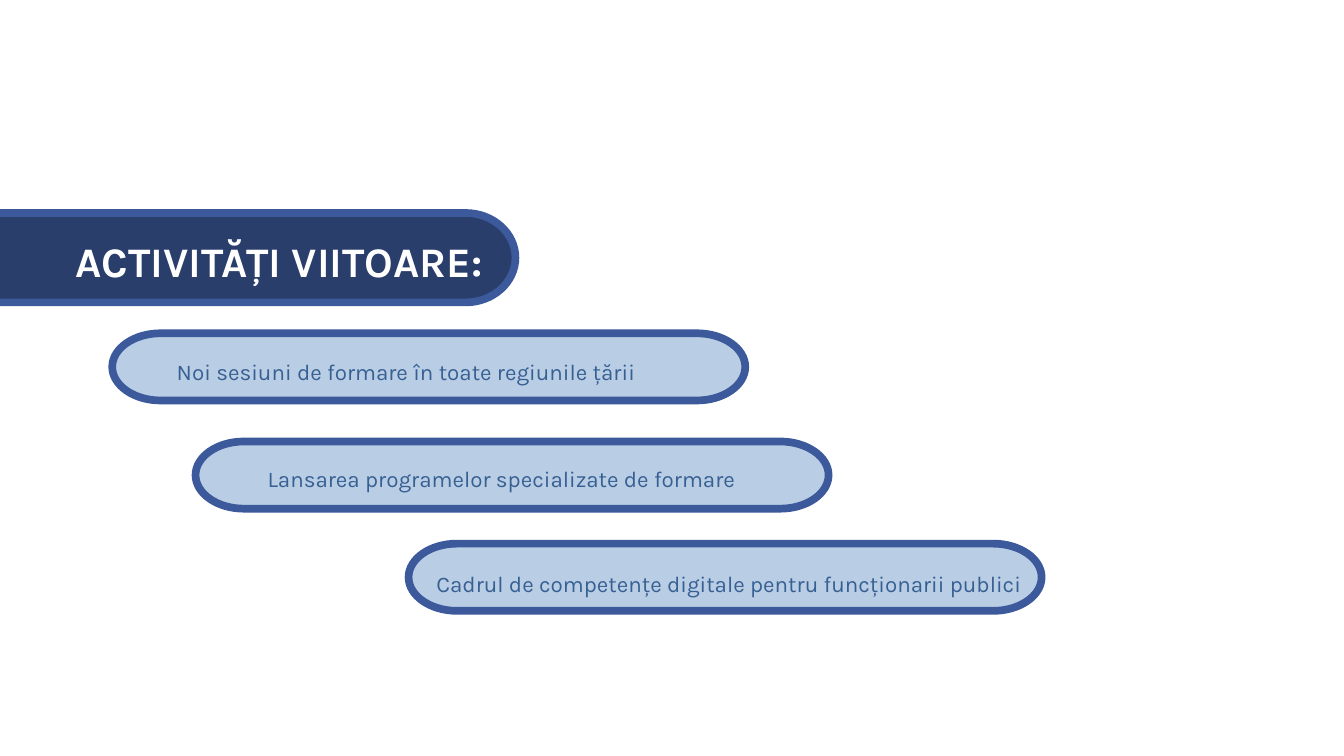
from lxml import etree
from pptx import Presentation
from pptx.dml.color import RGBColor
from pptx.enum.text import MSO_ANCHOR, MSO_AUTO_SIZE, PP_ALIGN
from pptx.oxml.ns import qn
from pptx.util import Inches, Pt

NAVY = RGBColor(0x29, 0x3E, 0x6B)
BLUE = RGBColor(0x3B, 0x59, 0x9B)
PALE_BLUE = RGBColor(0xB9, 0xCD, 0xE5)
TEXT_BLUE = RGBColor(0x37, 0x60, 0x92)
WHITE = RGBColor(0xFF, 0xFF, 0xFF)
FONT = "Karla"
CURVE = 0.55  # Bezier handle length of a quarter ellipse, per radius

# Left and top of each activity pill
PILL_SIZE = (9.42, 1)
PILL_CORNERS = [(1.67, 4.96), (2.91, 6.57), (6.08, 8.09)]

# Text and box of each activity label
LABELS = [
    ("Noi sesiuni de formare în toate regiunile țării ",
     (2.04, 4.92, 8.08, 0.74)),
    ("Lansarea programelor specializate de formare",
     (3.42, 6.51, 8.08, 0.74)),
    ("Cadrul de competențe digitale pentru funcționarii publici",
     (6.44, 8.08, 8.81, 0.74)),
]


def add_segment(outline, kind, points):
    segment = etree.SubElement(outline, qn(f"a:{kind}"))
    for x, y in points:
        etree.SubElement(segment, qn("a:pt"),
                         x=str(Inches(x)), y=str(Inches(y)))


def round_ends(shape, width, height, radius):
    """Turn a rectangular outline into a bar with half-ellipse ends."""
    outline = next(shape.element.iter(qn("a:path")))
    for segment in list(outline):
        outline.remove(segment)
    middle = height / 2
    inset = radius * (1 - CURVE)
    rise = middle * (1 - CURVE)
    right_end = width - radius
    add_segment(outline, "moveTo", [(right_end, 0)])
    add_segment(outline, "cubicBezTo",
                [(width - inset, 0), (width, rise), (width, middle)])
    add_segment(outline, "cubicBezTo",
                [(width, height - rise), (width - inset, height),
                 (right_end, height)])
    add_segment(outline, "lnTo", [(radius, height)])
    add_segment(outline, "cubicBezTo",
                [(inset, height), (0, height - rise), (0, middle)])
    add_segment(outline, "cubicBezTo",
                [(0, rise), (inset, 0), (radius, 0)])
    add_segment(outline, "close", [])


def add_pill(slide, box, end_radius, fill):
    left, top, width, height = box
    right, bottom = left + width, top + height
    builder = slide.shapes.build_freeform(Inches(left), Inches(top))
    builder.add_line_segments([
        (Inches(x), Inches(y))
        for x, y in ((right, top), (right, bottom), (left, bottom))])
    shape = builder.convert_to_shape()
    round_ends(shape, width, height, end_radius)
    shape.shadow.inherit = False
    shape.fill.solid()
    shape.fill.fore_color.rgb = fill
    shape.line.color.rgb = BLUE
    shape.line.width = Pt(8.25)


def add_label(slide, box, text, size, color, bold=False,
              align=PP_ALIGN.LEFT, anchor=MSO_ANCHOR.TOP):
    text_box = slide.shapes.add_textbox(*[Inches(value) for value in box])
    frame = text_box.text_frame
    frame.word_wrap = True
    frame.auto_size = MSO_AUTO_SIZE.SHAPE_TO_FIT_TEXT
    frame.vertical_anchor = anchor
    frame.margin_left = frame.margin_right = Inches(0)
    frame.margin_top = frame.margin_bottom = Inches(0)
    paragraph = frame.paragraphs[0]
    paragraph.alignment = align
    paragraph.line_spacing = Pt(63)
    run = paragraph.add_run()
    run.text = text
    run.font.name = FONT
    run.font.size = Pt(size)
    run.font.bold = bold
    run.font.color.rgb = color


def add_title_banner(slide, box):
    left, top, width, height = box
    add_pill(slide, box, 0.74, NAVY)
    add_label(slide, (left + 2.97, top + 0.21, 6.79, 0.81),
              "ACTIVITĂȚI VIITOARE:", 45, WHITE, bold=True)


def add_activities(slide):
    for corner in PILL_CORNERS:
        add_pill(slide, corner + PILL_SIZE, 0.72, PALE_BLUE)
    for text, box in LABELS:
        add_label(slide, box, text, 24, TEXT_BLUE,
                  align=PP_ALIGN.CENTER, anchor=MSO_ANCHOR.MIDDLE)


def main():
    presentation = Presentation()
    presentation.slide_width = Inches(20)
    presentation.slide_height = Inches(11.25)
    slide = presentation.slides.add_slide(presentation.slide_layouts[6])

    # Title bar, running in from the left edge
    add_title_banner(slide, (-1.85, 3.17, 9.52, 1.33))

    # Staggered activities
    add_activities(slide)

    presentation.save("out.pptx")


if __name__ == "__main__":
    main()
